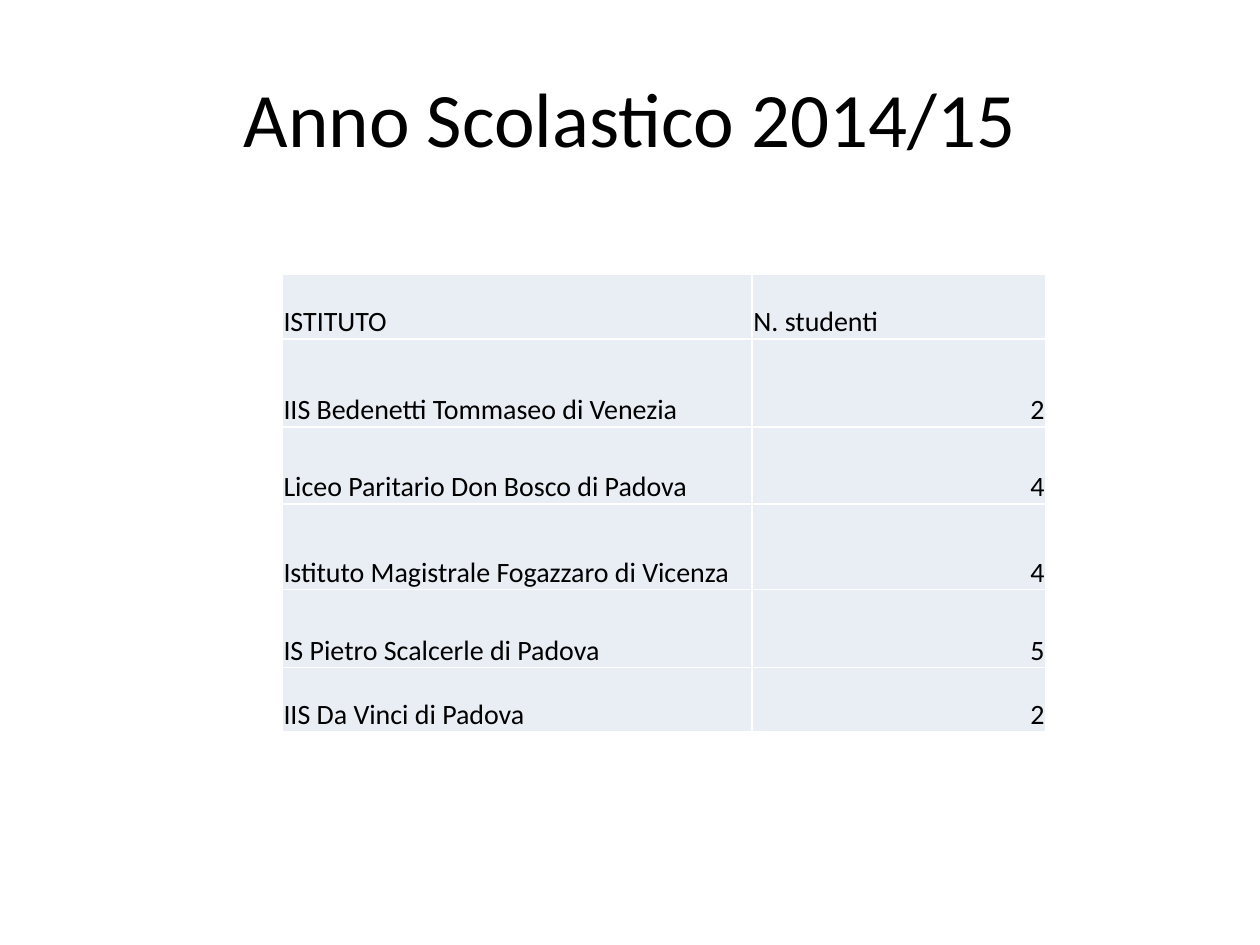
from lxml import etree
from pptx import Presentation
from pptx import util as u
from pptx.dml.color import RGBColor
from pptx.enum import text
from pptx.oxml import ns

PX = u.Inches(1) // 100
FONT = "Calibri"
COLORS = {"ink": "000000", "cell": "E9EDF4", "border": "FFFFFF"}
TITLE_BOX = (50, 30, 900, 125)
TABLE_BOX = (224, 218, 606, 363)
COLUMN_WIDTHS = (373, 233)
ROW_HEIGHTS = (51, 70, 61, 68, 62, 51)
ROWS = (
    ("ISTITUTO", "N. studenti"),
    ("IIS Bedenetti Tommaseo di Venezia", 2),
    ("Liceo Paritario Don Bosco di Padova", 4),
    ("Istituto Magistrale Fogazzaro di Vicenza", 4),
    ("IS Pietro Scalcerle di Padova", 5),
    ("IIS Da Vinci di Padova", 2),
)


def add_run(paragraph, words, size):
    """Add one formatted run to a paragraph."""
    run = paragraph.add_run()
    run.text = words
    run.font.name = FONT
    run.font.size = u.Pt(size)
    run.font.color.rgb = RGBColor.from_string(COLORS["ink"])


def add_borders(cell, width):
    """Draw a solid line on all four sides of a cell."""
    properties = cell._tc.get_or_add_tcPr()
    for index, side in enumerate(("lnL", "lnR", "lnT", "lnB")):
        line = etree.Element(ns.qn(f"a:{side}"), w=str(u.Pt(width)))
        fill = etree.SubElement(line, ns.qn("a:solidFill"))
        etree.SubElement(fill, ns.qn("a:srgbClr"), val=COLORS["border"])
        properties.insert(index, line)


def place_title(slide, box):
    """Fill the title placeholder in the given box."""
    title = slide.shapes.title
    title.left, title.top, title.width, title.height = (n * PX for n in box)
    title.text_frame.vertical_anchor = text.MSO_ANCHOR.MIDDLE
    paragraph = title.text_frame.paragraphs[0]
    paragraph.alignment = text.PP_ALIGN.CENTER
    add_run(paragraph, "Anno Scolastico 2014/15", 44)


def fill_cell(cell, value):
    """Write a value in a cell, with numbers to the right."""
    cell.fill.solid()
    cell.fill.fore_color.rgb = RGBColor.from_string(COLORS["cell"])
    add_borders(cell, 1)
    cell.vertical_anchor = text.MSO_ANCHOR.BOTTOM
    cell.margin_left = cell.margin_right = cell.margin_top = PX
    cell.margin_bottom = 0
    paragraph = cell.text_frame.paragraphs[0]
    is_number = isinstance(value, int)
    paragraph.alignment = text.PP_ALIGN.RIGHT if is_number else text.PP_ALIGN.LEFT
    add_run(paragraph, str(value), 16)


def place_table(slide, box):
    """Build the table of schools and students in the given box."""
    frame = slide.shapes.add_table(
        len(ROWS), len(COLUMN_WIDTHS), *(n * PX for n in box))
    table = frame.table
    table.first_row = table.horz_banding = False
    for column, width in zip(table.columns, COLUMN_WIDTHS):
        column.width = width * PX
    for row, height, values in zip(table.rows, ROW_HEIGHTS, ROWS):
        row.height = height * PX
        for cell, value in zip(row.cells, values):
            fill_cell(cell, value)


def main():
    """Build and save the presentation."""
    presentation = Presentation()
    presentation.slide_width = 1000 * PX
    presentation.slide_height = 750 * PX
    slide = presentation.slides.add_slide(presentation.slide_layouts[5])
    place_title(slide, TITLE_BOX)
    place_table(slide, TABLE_BOX)
    presentation.save("out.pptx")


if __name__ == "__main__":
    main()
